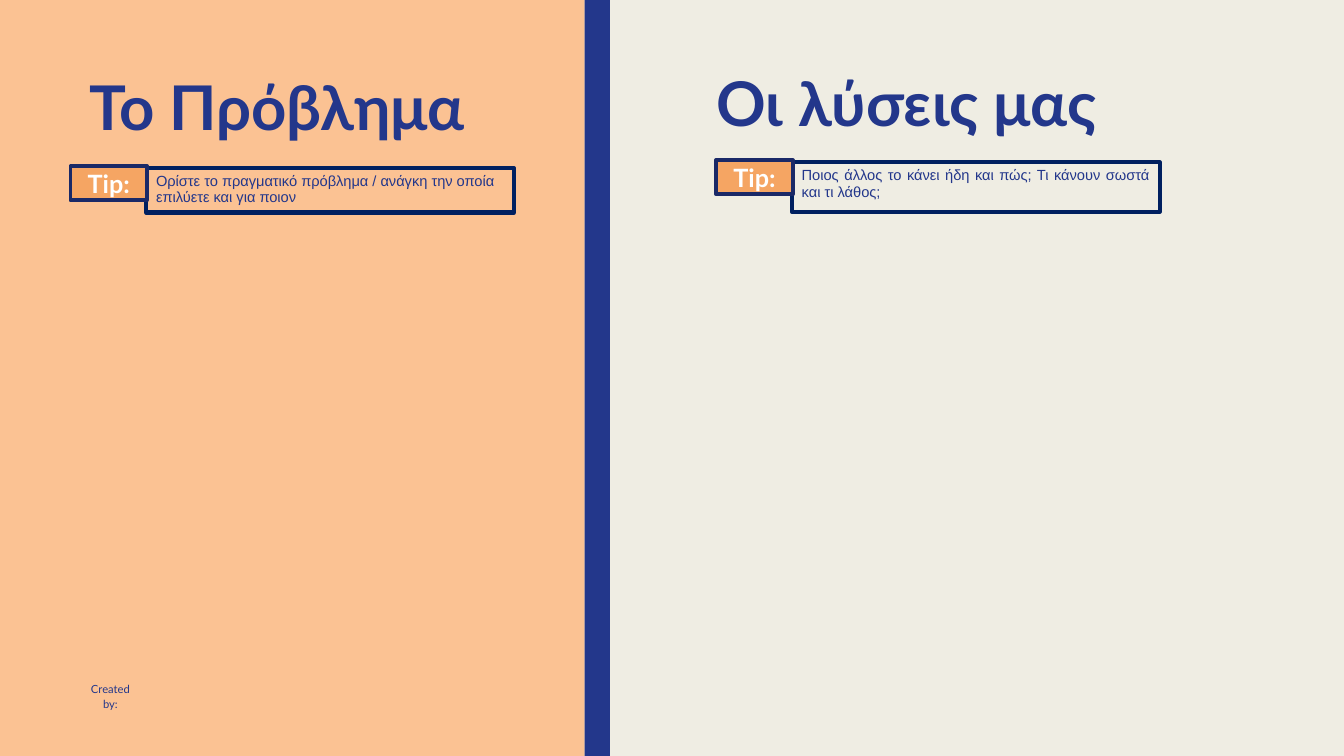
import pptx
import pptx.dml.color
import pptx.enum.shapes
import pptx.enum.text
import pptx.util

Pt = pptx.util.Pt
ALIGN = pptx.enum.text.PP_ALIGN
ANCHOR = pptx.enum.text.MSO_ANCHOR
BLUE = "23378B"


def rgb(hex_code):
    return pptx.dml.color.RGBColor.from_string(hex_code)


def add_rect(s, box, fill=None, line=None, line_width=0):
    sp = s.shapes.add_shape(pptx.enum.shapes.MSO_SHAPE.RECTANGLE, *map(Pt, box))
    sp.shadow.inherit = False
    if fill:
        sp.fill.solid()
        sp.fill.fore_color.rgb = rgb(fill)
    else:
        sp.fill.background()
    if line:
        sp.line.color.rgb = rgb(line)
        sp.line.width = Pt(line_width)
    else:
        sp.line.fill.background()
    return sp


def write(sp, text, size, font="Lato", color=BLUE, bold=False,
          align=ALIGN.LEFT, spacing=1.0, anchor=ANCHOR.TOP):
    tf = sp.text_frame
    tf.word_wrap = True
    tf.auto_size = pptx.enum.text.MSO_AUTO_SIZE.NONE
    tf.vertical_anchor = anchor
    tf.text = text
    p = tf.paragraphs[0]
    p.alignment = align
    p.line_spacing = spacing
    p.space_before = Pt(0)
    p.font.name = font
    p.font.size = Pt(size)
    p.font.bold = bold
    p.font.color.rgb = rgb(color)


def add_text(s, box, text, size, **style):
    write(s.shapes.add_textbox(*map(Pt, box)), text, size, **style)


def add_title(s, box, text, **style):
    sp = s.shapes.title
    sp.left, sp.top, sp.width, sp.height = map(Pt, box)
    s.shapes._spTree.append(sp._element)
    write(sp, text, 44, **style)


def add_tip(s, left, top, note_height, text, align):
    note = add_rect(s, (left + 54, top + 1.5, 262.8, note_height), line="002060", line_width=3)
    write(note, text, 10.5, font="Arial", align=align, spacing=0.94)
    label = add_rect(s, (left, top, 54.7, 24.5), "F5A563", "1A2967", 2.75)
    write(label, "Tip:", 18, color="FFFFFF", bold=True, align=ALIGN.CENTER, anchor=ANCHOR.MIDDLE)


def main():
    """Build the problem and solutions slide."""
    prs = pptx.Presentation()
    prs.slide_width, prs.slide_height = Pt(960), Pt(540)
    s = prs.slides.add_slide(prs.slide_layouts[5])
    s.background.fill.solid()
    s.background.fill.fore_color.rgb = rgb("EFEDE3")
    add_rect(s, (0, 0, 417.6, 540), "FBC293")
    add_rect(s, (417.6, 0, 18, 540), BLUE)

    heading = dict(bold=True, spacing=0.84)
    add_title(s, (56.9, 54, 303.8, 170), "Το Πρόβλημα", **heading)
    add_text(s, (52.6, 482.4, 52.6, 22.3), "Created by:", 8, align=ALIGN.CENTER, spacing=1.12)
    add_tip(s, 511.6, 114.4, 35.3,
            "Ποιος άλλος το κάνει ήδη και πώς; Τι κάνουν σωστά και τι λάθος;", ALIGN.JUSTIFY)
    add_tip(s, 50.4, 118.7, 31.7,
            "Ορίστε το πραγματικό πρόβλημα / ανάγκη την οποία επιλύετε και για ποιον", ALIGN.LEFT)
    add_text(s, (504.7, 51.1, 303.8, 170), "Οι λύσεις μας", 44, **heading)
    prs.save("out.pptx")


if __name__ == "__main__":
    main()
